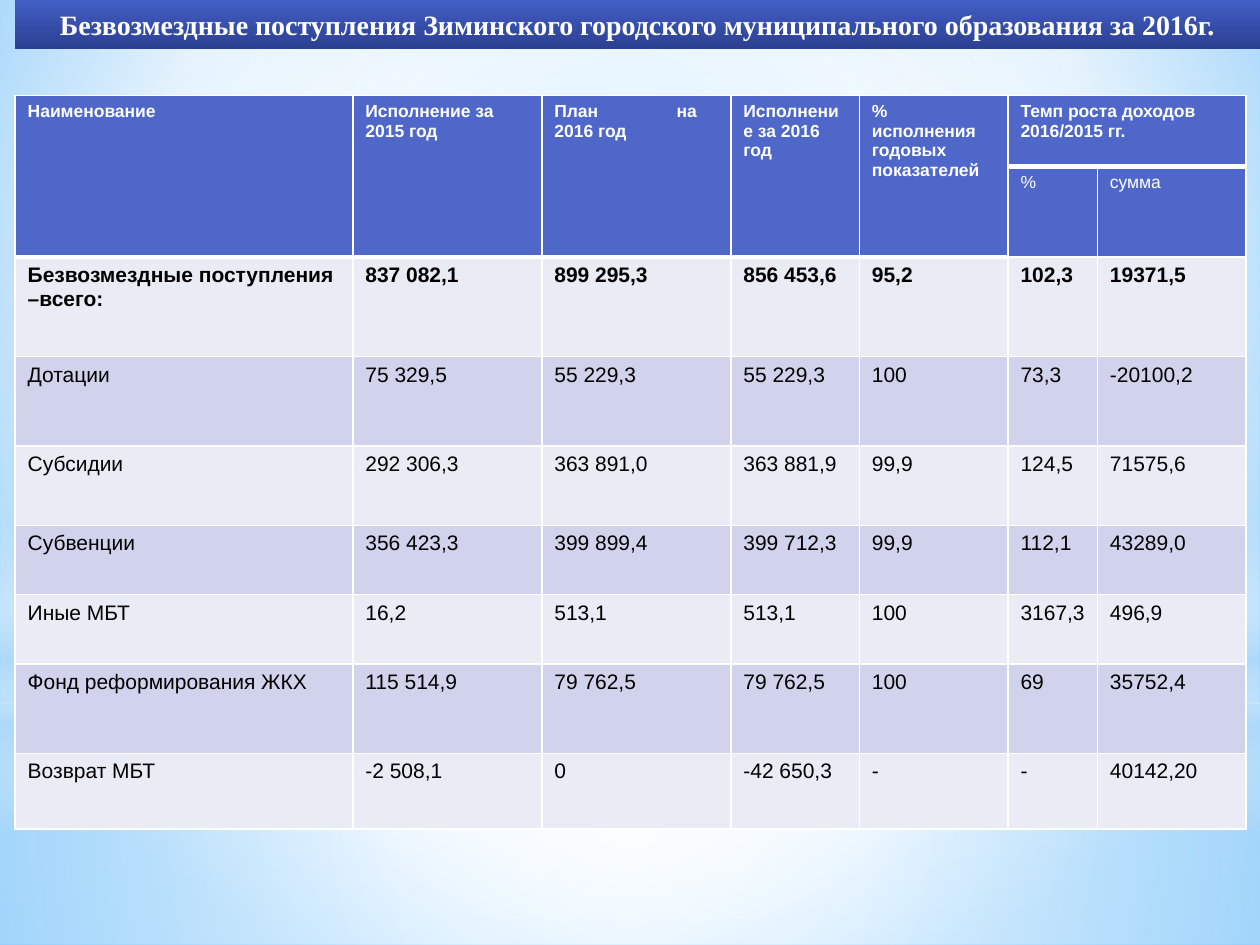
import pptx
import pptx.dml.color
import pptx.enum.shapes
import pptx.enum.text
import pptx.oxml
import pptx.oxml.ns
import pptx.util

Inches = pptx.util.Inches
Pt = pptx.util.Pt
qn = pptx.oxml.ns.qn
NAMESPACE = pptx.oxml.ns.nsdecls("a")


def color(value):
    return pptx.dml.color.RGBColor.from_string(value)


def paint_gradient(element, fill, stops, focus=None):
    fill.solid()
    marks = "".join(
        f'<a:gs pos="{place * 1000}"><a:srgbClr val="{tone}">'
        f'<a:alpha val="{opacity * 1000}"/></a:srgbClr></a:gs>'
        for place, tone, opacity in stops
    )
    direction = '<a:lin ang="5400000" scaled="0"/>'
    if focus:
        sides = " ".join(f'{side}="{value * 1000}"' for side, value in zip("ltrb", focus))
        direction = f'<a:path path="circle"><a:fillToRect {sides}/></a:path>'
    gradient = pptx.oxml.parse_xml(
        f'<a:gradFill {NAMESPACE} rotWithShape="1"><a:gsLst>{marks}</a:gsLst>{direction}</a:gradFill>'
    )
    solid = element.find(".//" + qn("a:solidFill"))
    solid.getparent().replace(solid, gradient)


deck = pptx.Presentation()
deck.slide_width = Inches(10)
deck.slide_height = Inches(7.5)
page = deck.slides.add_slide(deck.slide_layouts[5])

paint_gradient(
    page.element,
    page.background.fill,
    [(0, "9ED5FF", 100), (60, "FFFFFF", 100), (100, "5BB9FF", 100)],
    (20, 10, 20, 60),
)

shapes = pptx.enum.shapes.MSO_SHAPE
center = (50, 50, 50, 50)
glows = [
    (shapes.RECTANGLE, 0, 5.58, 1.92,
     [(0, "FFFFFF", 91), (37, "FFFFFF", 76), (100, "B4DCFA", 79)], center),
    (shapes.RECTANGLE, 0, 0, 5.58,
     [(0, "FFFFFF", 89), (48, "FFFFFF", 62), (100, "B4DCFA", 79)], center),
    (shapes.RECTANGLE, 0, 4.12, 2.5,
     [(0, "FFFFFF", 0), (29, "FFFFFF", 30), (45, "B4DCFA", 40),
      (55, "FFFFFF", 26), (65, "B4DCFA", 60), (100, "FFFFFF", 0)], None),
    (shapes.OVAL, 0, 1.75, 5.58,
     [(0, "FFFFFF", 100), (56, "FFFFFF", 0)], center),
]
for kind, left, top, height, stops, focus in glows:
    glow = page.shapes.add_shape(kind, Inches(left), Inches(top), Inches(10), Inches(height))
    paint_gradient(glow.element, glow.fill, stops, focus)
    glow.line.fill.background()
    glow.shadow.inherit = False

widths = [2.68, 1.5, 1.5, 1.02, 1.18, 0.71, 1.18]
heights = [0.56, 0.7, 0.79, 0.71, 0.63, 0.55, 0.55, 0.71, 0.6]
rows = [
    ["Наименование", "Исполнение за 2015 год", "План\tна 2016 год", "Исполнение за 2016 год",
     "% исполнения годовых показателей", "Темп роста доходов 2016/2015 гг.", ""],
    ["", "", "", "", "", "%", "сумма"],
    ["Безвозмездные поступления –всего:", "837 082,1", "899 295,3", "856 453,6", "95,2", "102,3", "19371,5"],
    ["Дотации", "75 329,5", "55 229,3", "55 229,3", "100", "73,3", "-20100,2"],
    ["Субсидии", "292 306,3", "363 891,0", "363 881,9", "99,9", "124,5", "71575,6"],
    ["Субвенции", "356 423,3", "399 899,4", "399 712,3", "99,9", "112,1", "43289,0"],
    ["Иные МБТ", "16,2", "513,1", "513,1", "100", "3167,3", "496,9"],
    ["Фонд реформирования ЖКХ", "115 514,9", "79 762,5", "79 762,5", "100", "69", "35752,4"],
    ["Возврат МБТ", "-2 508,1", "0", "-42 650,3", "-", "-", "40142,20"],
]
table = page.shapes.add_table(
    len(rows), len(widths), Inches(0.12), Inches(0.76), Inches(sum(widths)), Inches(sum(heights))
).table
for column, width in zip(table.columns, widths):
    column.width = Inches(width)
for row, height in zip(table.rows, heights):
    row.height = Inches(height)
for column in range(5):
    table.cell(0, column).merge(table.cell(1, column))
table.cell(0, 5).merge(table.cell(0, 6))

for row, texts in enumerate(rows):
    is_header = row < 2
    for column, text in enumerate(texts):
        cell = table.cell(row, column)
        properties = cell._tc.get_or_add_tcPr()
        header_end = 1 if column < 5 else 0
        thick_sides = {"T": row == header_end + 1, "B": row in (0, header_end)}
        for side in "LRTB":
            weight = Pt(3 if thick_sides.get(side) else 1)
            properties.append(pptx.oxml.parse_xml(
                f'<a:ln{side} {NAMESPACE} w="{weight}"><a:solidFill>'
                f'<a:srgbClr val="FFFFFF"/></a:solidFill></a:ln{side}>'
            ))
        cell.fill.solid()
        band = "D0D3EB" if row % 2 else "E9EBF5"
        cell.fill.fore_color.rgb = color("4E67C8" if is_header else band)
        if not text:
            continue
        para = cell.text_frame.paragraphs[0]
        if "\t" in text:
            para._p.get_or_add_pPr().append(pptx.oxml.parse_xml(
                f'<a:tabLst {NAMESPACE}><a:tab pos="{Inches(0.97)}" algn="l"/></a:tabLst>'
            ))
        span = para.add_run()
        span.text = text
        span.font.name = "Arial"
        span.font.size = Pt(10 if is_header else 12)
        span.font.bold = row in (0, 2)
        span.font.color.rgb = color("FFFFFF" if is_header else "000000")

title = page.shapes.title
title.left, title.top, title.width, title.height = Inches(0.12), 0, Inches(9.88), Inches(0.39)
paint_gradient(title.element, title.fill, [(0, "435EC5", 100), (100, "2B4092", 100)])
title.text_frame.word_wrap = True
title.text_frame.auto_size = pptx.enum.text.MSO_AUTO_SIZE.NONE
title.text_frame.vertical_anchor = pptx.enum.text.MSO_ANCHOR.MIDDLE
para = title.text_frame.paragraphs[0]
para.alignment = pptx.enum.text.PP_ALIGN.CENTER
span = para.add_run()
span.text = "Безвозмездные поступления Зиминского городского муниципального образования за 2016г."
span.font.name = "Times New Roman"
span.font.size = Pt(16)
span.font.bold = True
span.font.color.rgb = color("FFFFFF")
page.shapes._spTree.append(title.element)

deck.save("out.pptx")
